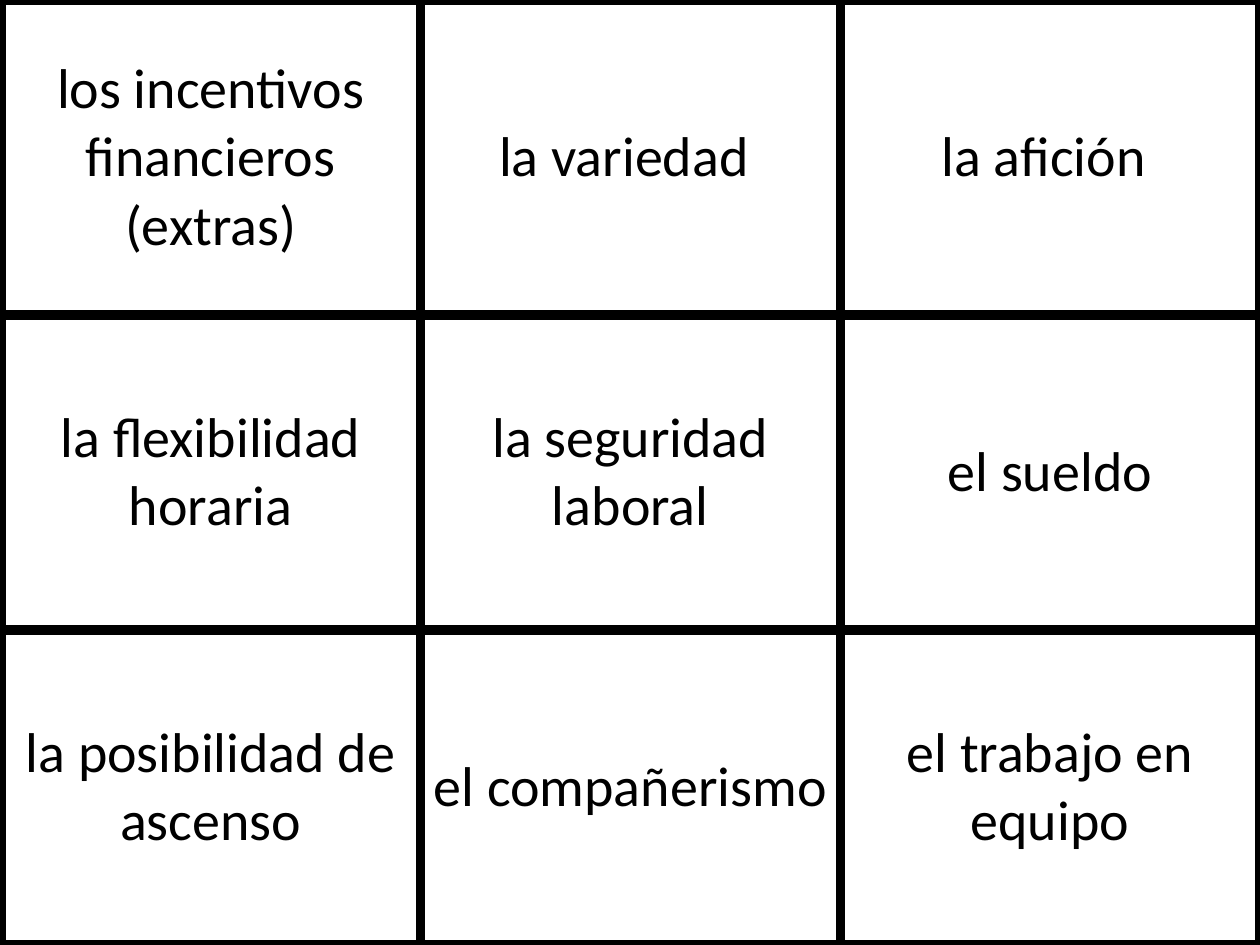
from lxml import etree
from pptx import Presentation
from pptx.dml.color import RGBColor
from pptx.enum.text import MSO_ANCHOR, PP_ALIGN
from pptx.oxml.ns import qn
from pptx.util import Pt

BLACK = RGBColor(0, 0, 0)
WHITE = RGBColor(255, 255, 255)
CENTER = PP_ALIGN.CENTER
MIDDLE = MSO_ANCHOR.MIDDLE
BORDER_WIDTH = Pt(6)

JOB_FACTORS = [
    ["los incentivos financieros (extras)", "la variedad ", "la afición "],
    ["la flexibilidad horaria", "la seguridad laboral", "el sueldo"],
    ["la posibilidad de ascenso", "el compañerismo", "el trabajo en equipo"],
]


def add_borders(cell):
    properties = cell._tc.get_or_add_tcPr()
    for side in ("a:lnL", "a:lnR", "a:lnT", "a:lnB"):
        line = etree.SubElement(properties, qn(side), w=str(BORDER_WIDTH))
        fill = etree.SubElement(line, qn("a:solidFill"))
        etree.SubElement(fill, qn("a:srgbClr"), val=str(BLACK))


def style_card(cell, text):
    add_borders(cell)
    cell.fill.solid()
    cell.fill.fore_color.rgb = WHITE
    cell.vertical_anchor = MIDDLE
    cell.text = text
    paragraph = cell.text_frame.paragraphs[0]
    paragraph.alignment = CENTER
    paragraph.font.name = "Calibri"
    paragraph.font.size = Pt(32)
    paragraph.font.color.rgb = BLACK


def add_card_grid(slide, left, top, width, height, texts):
    row_count, column_count = len(texts), len(texts[0])
    table = slide.shapes.add_table(
        row_count, column_count, left, top, width, height
    ).table
    table.first_row = False
    table.horz_banding = False
    for column in table.columns:
        column.width = width // column_count
    for row, row_texts in zip(table.rows, texts):
        row.height = height // row_count
        for cell, text in zip(row.cells, row_texts):
            style_card(cell, text)


def main():
    presentation = Presentation()
    presentation.slide_width = Pt(720)
    presentation.slide_height = Pt(540)
    slide = presentation.slides.add_slide(presentation.slide_layouts[6])
    add_card_grid(slide, Pt(0.5), Pt(0), Pt(719.5), Pt(540), JOB_FACTORS)
    presentation.save("out.pptx")


if __name__ == "__main__":
    main()
